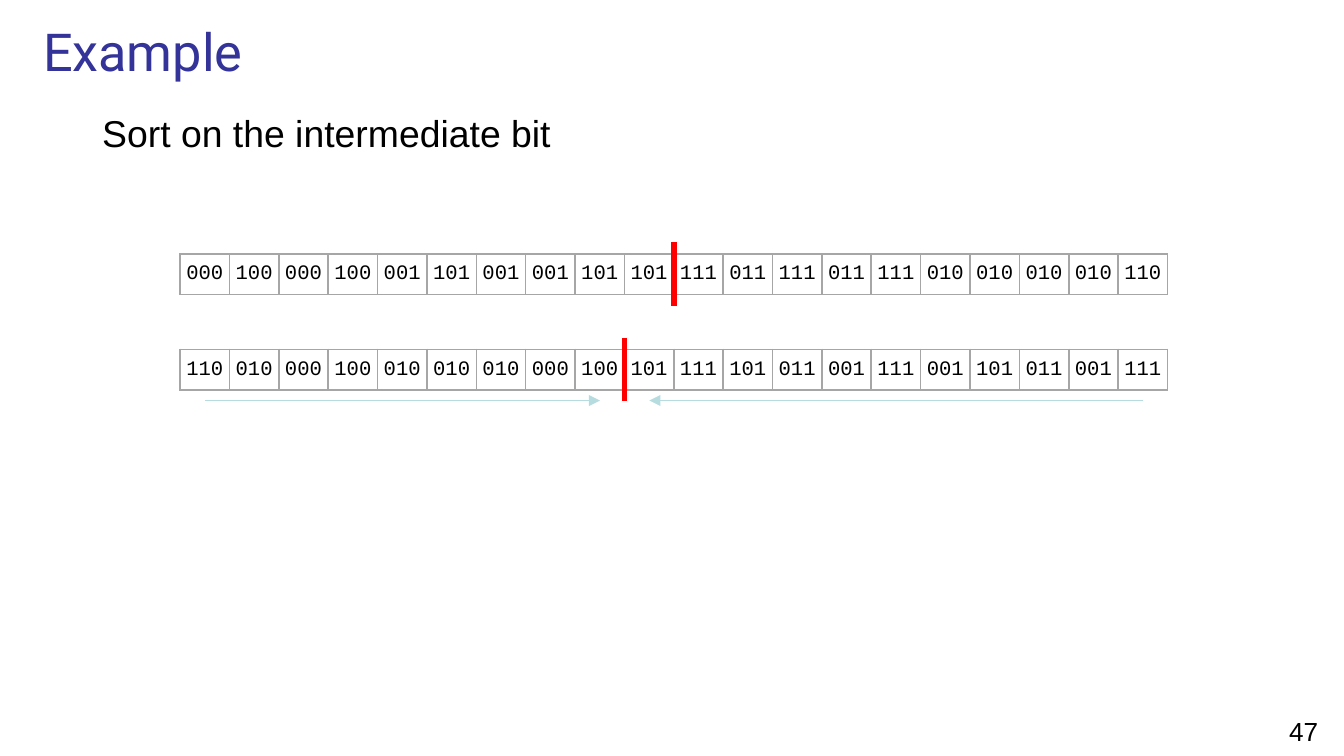
from lxml import etree
from pptx import Presentation
from pptx.dml.color import RGBColor
from pptx.enum.shapes import MSO_CONNECTOR
from pptx.enum.text import MSO_ANCHOR, PP_ALIGN
from pptx.oxml.ns import qn
from pptx.util import Pt

STRAIGHT = MSO_CONNECTOR.STRAIGHT
TOP, MIDDLE = MSO_ANCHOR.TOP, MSO_ANCHOR.MIDDLE
LEFT, CENTER = PP_ALIGN.LEFT, PP_ALIGN.CENTER

COLORS = {"title": "333399", "text": "000000", "border": "A6A6A6",
          "divider": "FF0000", "scan": "B6DCDF"}

SORTED_KEYS = ("000 100 000 100 001 101 001 001 101 101 "
               "111 011 111 011 111 010 010 010 010 110").split()
INPUT_KEYS = ("110 010 000 100 010 010 010 000 100 101 "
              "111 101 011 001 111 001 101 011 001 111").split()

ARRAY_LEFT, ARRAY_WIDTH, ARRAY_HEIGHT = 96.5, 529.2, 21.6


def style_paragraph(paragraph, font_name, size, color, align):
    """Format the runs and alignment of one paragraph."""
    paragraph.alignment = align
    for run in paragraph.runs:
        run.font.name = font_name
        run.font.size = Pt(size)
        run.font.color.rgb = RGBColor.from_string(COLORS[color])


def add_label(slide, box, text, font_name, size, color="text",
              align=LEFT, anchor=TOP):
    """Place one line of text in a box and return its paragraph."""
    frame = slide.shapes.add_textbox(*map(Pt, box)).text_frame
    frame.word_wrap = True
    frame.vertical_anchor = anchor
    frame.text = text
    paragraph = frame.paragraphs[0]
    style_paragraph(paragraph, font_name, size, color, align)
    return paragraph


def add_line(slide, start, end, color, width, arrow=False):
    """Draw a straight line, with an arrowhead at its end if asked."""
    line = slide.shapes.add_connector(STRAIGHT, *map(Pt, (*start, *end)))
    line.line.color.rgb = RGBColor.from_string(COLORS[color])
    line.line.width = Pt(width)
    if arrow:
        etree.SubElement(line.line._get_or_add_ln(), qn("a:tailEnd"), type="triangle")
    etree.SubElement(line._element.spPr, qn("a:effectLst"))


def set_borders(cell, color, width):
    """Give a cell the same solid border on all four sides."""
    properties = cell._tc.get_or_add_tcPr()
    for index, side in enumerate(("a:lnL", "a:lnR", "a:lnT", "a:lnB")):
        border = etree.Element(qn(side), w=str(Pt(width)))
        fill = etree.SubElement(border, qn("a:solidFill"))
        etree.SubElement(fill, qn("a:srgbClr"), val=COLORS[color])
        properties.insert(index, border)


def add_bit_array(slide, box, keys, split):
    """Draw the keys as a one-row table with a divider after split cells."""
    left, top, width, height = box
    step = width / len(keys)
    table = slide.shapes.add_table(1, len(keys), *map(Pt, box)).table
    table.first_row = table.horz_banding = False
    for column, cell, key in zip(table.columns, table.rows[0].cells, keys):
        column.width = Pt(step)
        cell.fill.background()
        cell.margin_left = cell.margin_right = 0
        cell.margin_top = cell.margin_bottom = 0
        cell.vertical_anchor = MIDDLE
        cell.text = key
        style_paragraph(cell.text_frame.paragraphs[0], "Courier New", 11, "text", CENTER)
        set_borders(cell, "border", 1)
    divider = left + split * step
    add_line(slide, (divider, top - 6.2), (divider, top + height + 6.2), "divider", 3)


def add_scan_arrows(slide, box, count, split):
    """Draw arrows under an array from both end cells towards the divider."""
    left, top, width, height = box
    level = top + height + 5.8
    for first, last in ((0, split - 1), (count - 1, split)):
        start, end = (left + (cell + 0.5) * width / count for cell in (first, last))
        add_line(slide, (start, level), (end, level), "scan", 0.75, arrow=True)


def add_headings(slide, box):
    """Place title, body line and page number within the slide box."""
    left, top, width, height = box
    add_label(slide, (left + 16, top + 5.8, 701, 42.5), "Example",
              "Roboto", 28, "title", anchor=MIDDLE)
    body = add_label(slide, (left + 31.7, top + 55.4, 659.5, 315.4),
                     "Sort on the intermediate bit", "Arial", 20)
    body.space_before = Pt(4)
    body._p.get_or_add_pPr().set("marL", str(Pt(16)))
    add_label(slide, (left + width - 43.2, top + height - 25.5, 43.2, 21.6),
              "47", "Arial", 14, align=CENTER)


def main():
    """Build the slide and save it."""
    deck = Presentation()
    deck.slide_width, deck.slide_height = Pt(720), Pt(405)
    slide = deck.slides.add_slide(deck.slide_layouts[6])
    add_headings(slide, (0, 0, 720, 405))
    sorted_box, input_box = ((ARRAY_LEFT, top, ARRAY_WIDTH, ARRAY_HEIGHT)
                             for top in (136.1, 187.2))
    add_bit_array(slide, sorted_box, SORTED_KEYS, 10)
    add_bit_array(slide, input_box, INPUT_KEYS, 9)
    add_scan_arrows(slide, input_box, len(INPUT_KEYS), 9)
    deck.save("out.pptx")


if __name__ == "__main__":
    main()
